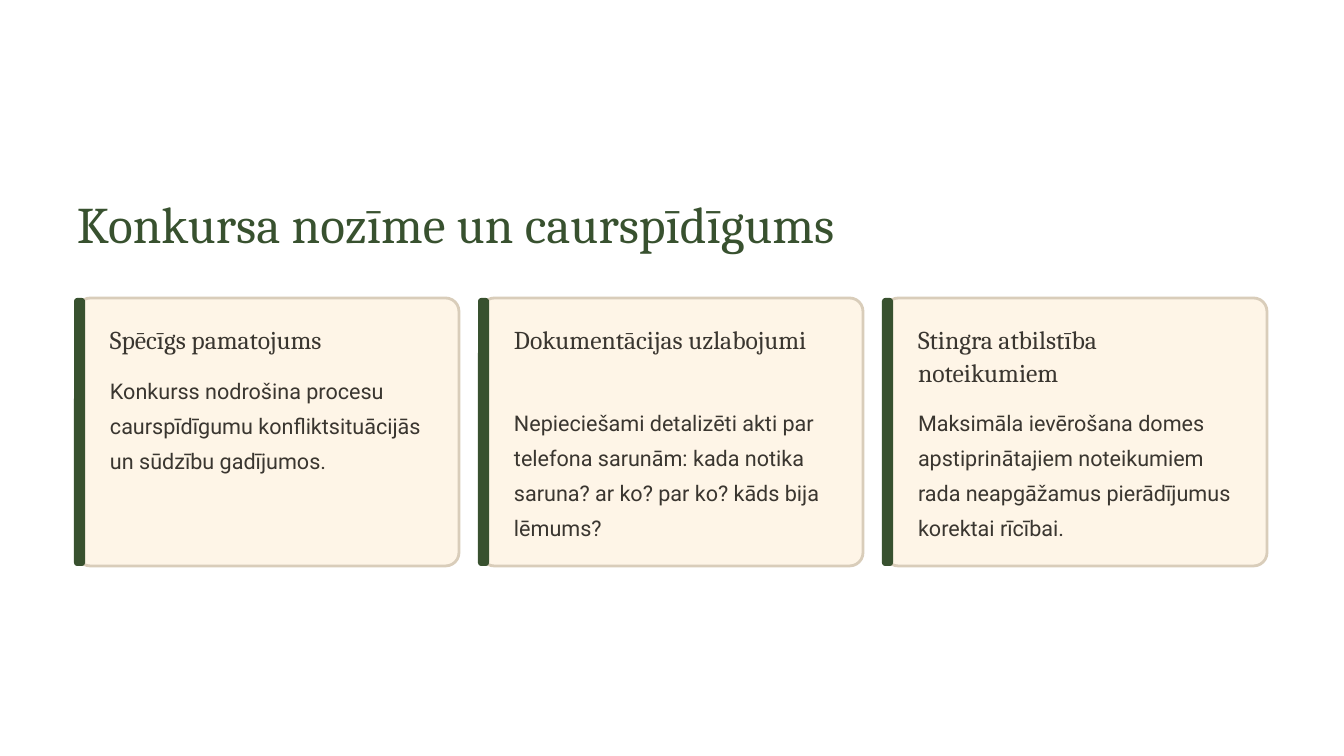
from pptx import Presentation
from pptx.dml.color import RGBColor
from pptx.enum.shapes import MSO_SHAPE
from pptx.enum.text import MSO_ANCHOR, MSO_AUTO_SIZE, PP_ALIGN
from pptx.util import Emu, Pt

SCALE = 914400 / 84
COLORS = {"green": "38512F", "cream": "FEF5E7", "edge": "D9CDBA", "ink": "3A3630"}
SERIF, SANS = "Cambria", "Roboto"
LEFT, TOP, STEP = 77, 298, 404
WIDTH, HEIGHT = 382, 268
# Heading, body text, top of the body text
CARDS = [
    ("Spēcīgs pamatojums",
     "Konkurss nodrošina procesu caurspīdīgumu konfliktsituācijās un sūdzību gadījumos.",
     369),
    ("Dokumentācijas uzlabojumi",
     "Nepieciešami detalizēti akti par telefona sarunām: kada notika saruna? "
     "ar ko? par ko? kāds bija lēmums?",
     401),
    ("Stingra atbilstība noteikumiem",
     "Maksimāla ievērošana domes apstiprinātajiem noteikumiem rada neapgāžamus "
     "pierādījumus korektai rīcībai.",
     401),
]


def px(count):
    return Emu(round(count * SCALE))


def color(name):
    return RGBColor.from_string(COLORS[name])


def write(shape, text, font, size, lead, tone, wrap=True):
    """Fill a shape with one left-aligned run, lead being the line height."""
    frame = shape.text_frame
    frame.margin_left = frame.margin_right = 0
    frame.margin_top = frame.margin_bottom = 0
    frame.vertical_anchor = MSO_ANCHOR.TOP
    frame.auto_size = MSO_AUTO_SIZE.NONE
    frame.word_wrap = wrap
    para = frame.paragraphs[0]
    para.alignment = PP_ALIGN.LEFT
    para.line_spacing = Pt(lead)
    para.space_before = Pt(0)
    run = para.add_run()
    run.text = text
    run.font.name = font
    run.font.size = Pt(size)
    run.font.color.rgb = color(tone)


def add_text(slide, x, y, w, h, *style):
    write(slide.shapes.add_textbox(px(x), px(y), px(w), px(h)), *style)


def add_panel(slide, x, w, curve, fill, edge=None):
    """Add a rounded box of card height."""
    box = slide.shapes.add_shape(
        MSO_SHAPE.ROUNDED_RECTANGLE, px(x), px(TOP), px(w), px(HEIGHT))
    box.adjustments[0] = curve
    box.shadow.inherit = False
    box.fill.solid()
    box.fill.fore_color.rgb = color(fill)
    if edge:
        box.line.color.rgb = color(edge)
        box.line.width = Pt(2.4)
    else:
        box.line.fill.background()


def add_card(slide, x, head, body, top):
    add_panel(slide, x, WIDTH, 0.05, "cream", "edge")
    add_panel(slide, x - 3, 11, 0.3, "green")
    add_text(slide, x + 33, 323, 324, top - 336, head, SERIF, 22, 27.5, "ink")
    add_text(slide, x + 33, top, 324, 141, body, SANS, 18.5, 30, "ink")


def add_title(slide, text):
    title = slide.shapes.title
    title.left, title.top = px(LEFT), px(190)
    title.width, title.height = px(859), px(65)
    write(title, text, SERIF, 44, 55, "green", False)


def main():
    deck = Presentation()
    deck.slide_width, deck.slide_height = px(1344), px(756)
    slide = deck.slides.add_slide(deck.slide_layouts[5])
    add_title(slide, "Konkursa nozīme un caurspīdīgums")
    for index, card in enumerate(CARDS):
        add_card(slide, LEFT + index * STEP, *card)
    deck.save("out.pptx")


if __name__ == "__main__":
    main()
